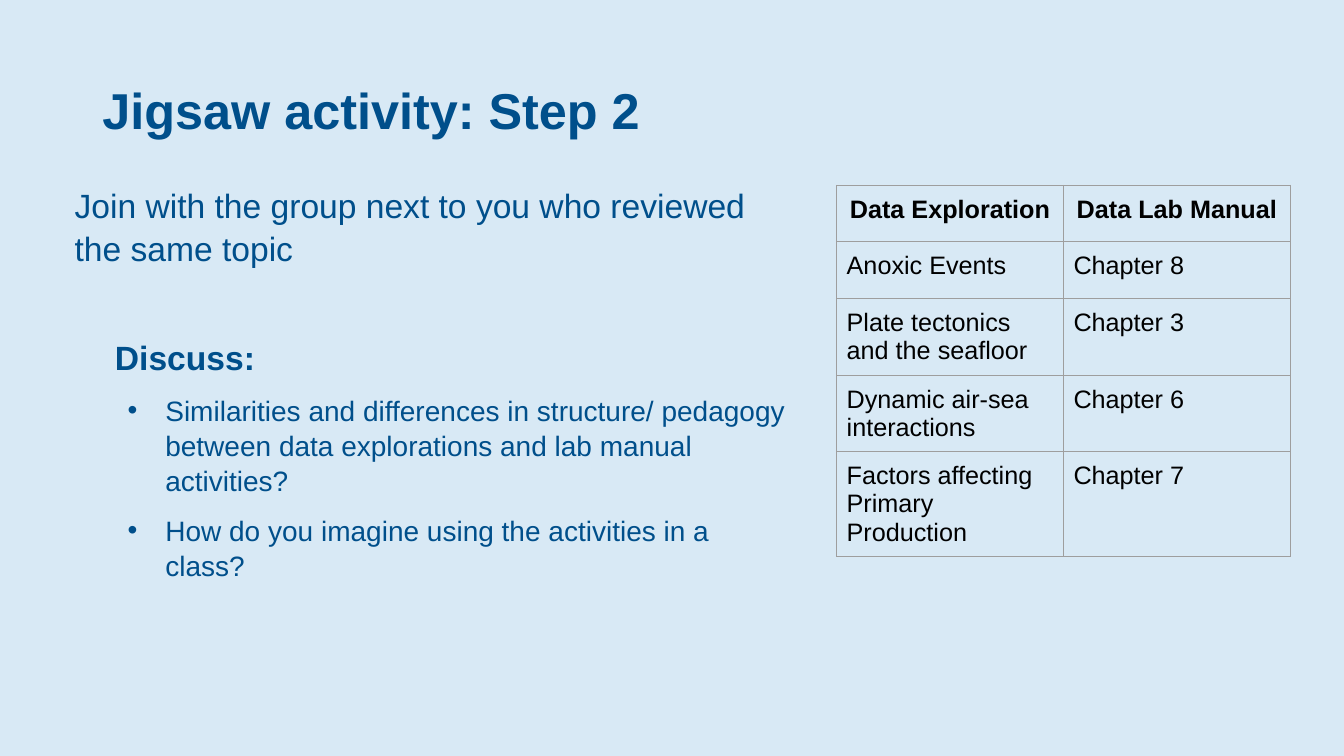
"""Build the slide for step 2 of the jigsaw activity."""
from lxml import etree
from pptx import Presentation
from pptx.dml.color import RGBColor as RGB
from pptx.enum.text import MSO_ANCHOR as Anchor, MSO_AUTO_SIZE as Auto, PP_ALIGN as Align
from pptx.oxml.ns import qn
from pptx.util import Pt

PALE, NAVY, BLACK, GREY = "D8E9F5", "004F8B", "000000", "9E9E9E"
TITLE = "Jigsaw activity: Step 2"
BODY = [
    # text, level, size, bold, margin, indent, space before
    ("Join with the group next to you who reviewed the same topic", 0, 24, False, 7.2, 0, 0),
    ("Discuss:", 0, 24, True, 0, 36, 48),
    ("Similarities and differences in structure/ pedagogy between data explorations "
     "and lab manual activities?", 1, 20, False, 72, -27, 10),
    ("How do you imagine using the activities in a class?", 1, 20, False, 72, -27, 10),
]
ROWS = [
    ("Data Exploration", "Data Lab Manual"),
    ("Anoxic Events", "Chapter 8"),
    ("Plate tectonics and the seafloor", "Chapter 3"),
    ("Dynamic air-sea interactions", "Chapter 6"),
    ("Factors affecting Primary Production", "Chapter 7"),
]
COL, ROW = 162, 40.5


def color(code):
    return RGB.from_string(code)


def style(para, size, code, bold):
    for run in para.runs:
        font = run.font
        font.name, font.size, font.bold = "Arial", Pt(size), bold
        font.color.rgb = color(code)


def place(shape, left, top, width, height, anchor):
    shape.left, shape.top, shape.width, shape.height = map(Pt, (left, top, width, height))
    frame = shape.text_frame
    frame.word_wrap, frame.auto_size = True, Auto.NONE
    frame.vertical_anchor = anchor
    return frame


def bullet(para, level, margin, indent):
    props = para._p.get_or_add_pPr()
    props.set("marL", str(Pt(margin)))
    props.set("indent", str(Pt(indent)))
    if not level:
        etree.SubElement(props, qn("a:buNone"))
        return
    tint = etree.SubElement(props, qn("a:buClr"))
    etree.SubElement(tint, qn("a:srgbClr"), val=NAVY)
    etree.SubElement(props, qn("a:buFont"), typeface="Arial")
    etree.SubElement(props, qn("a:buChar"), char="•")


def border(cell):
    props = cell._tc.get_or_add_tcPr()
    for side in "LRTB":
        line = etree.SubElement(props, qn("a:ln" + side), w=str(Pt(0.75)))
        fill = etree.SubElement(line, qn("a:solidFill"))
        etree.SubElement(fill, qn("a:srgbClr"), val=GREY)


def add_body(shape):
    frame = place(shape, 38.9, 127.4, 532.8, 373.7, Anchor.TOP)
    for i, (text, level, size, bold, margin, indent, gap) in enumerate(BODY):
        para = frame.add_paragraph() if i else frame.paragraphs[0]
        para.text, para.level = text, level
        bullet(para, level, margin, indent)
        para.space_before, para.line_spacing = Pt(gap), 1.05
        style(para, size, NAVY, bold)


def add_topics(slide):
    table = slide.shapes.add_table(len(ROWS), 2, Pt(597.6), Pt(132.3),
                                   Pt(2 * COL), Pt(len(ROWS) * ROW)).table
    table.first_row = table.horz_banding = False
    for col in table.columns:
        col.width = Pt(COL)
    for r, texts in enumerate(ROWS):
        table.rows[r].height = Pt(ROW)
        for c, text in enumerate(texts):
            cell = table.cell(r, c)
            cell.text = text
            cell.margin_left = cell.margin_right = Pt(7.2)
            cell.margin_top = cell.margin_bottom = Pt(7.2)
            border(cell)
            cell.fill.background()
            para = cell.text_frame.paragraphs[0]
            para.alignment = Align.LEFT if r else Align.CENTER
            style(para, 18, BLACK, r == 0)


def main():
    deck = Presentation()
    deck.slide_width, deck.slide_height = Pt(960), Pt(540)
    slide = deck.slides.add_slide(deck.slide_layouts[1])
    back = slide.background.fill
    back.solid()
    back.fore_color.rgb = color(PALE)
    title, body = slide.placeholders
    frame = place(title, 66, 28.8, 828, 104.4, Anchor.MIDDLE)
    frame.text = TITLE
    para = frame.paragraphs[0]
    para.alignment, para.line_spacing = Align.LEFT, 0.9
    style(para, 36, NAVY, True)
    add_body(body)
    add_topics(slide)
    deck.save("out.pptx")


if __name__ == "__main__":
    main()
